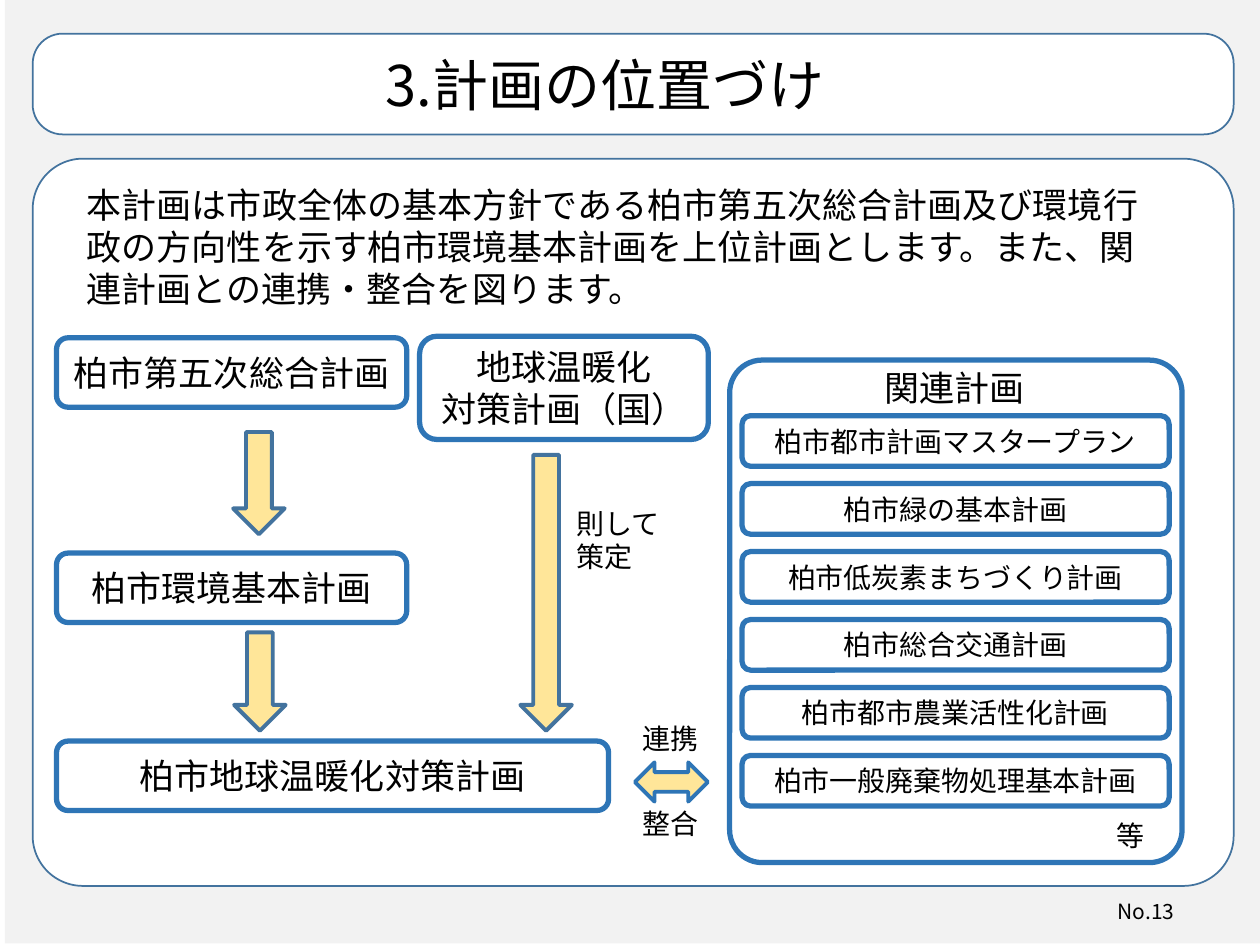
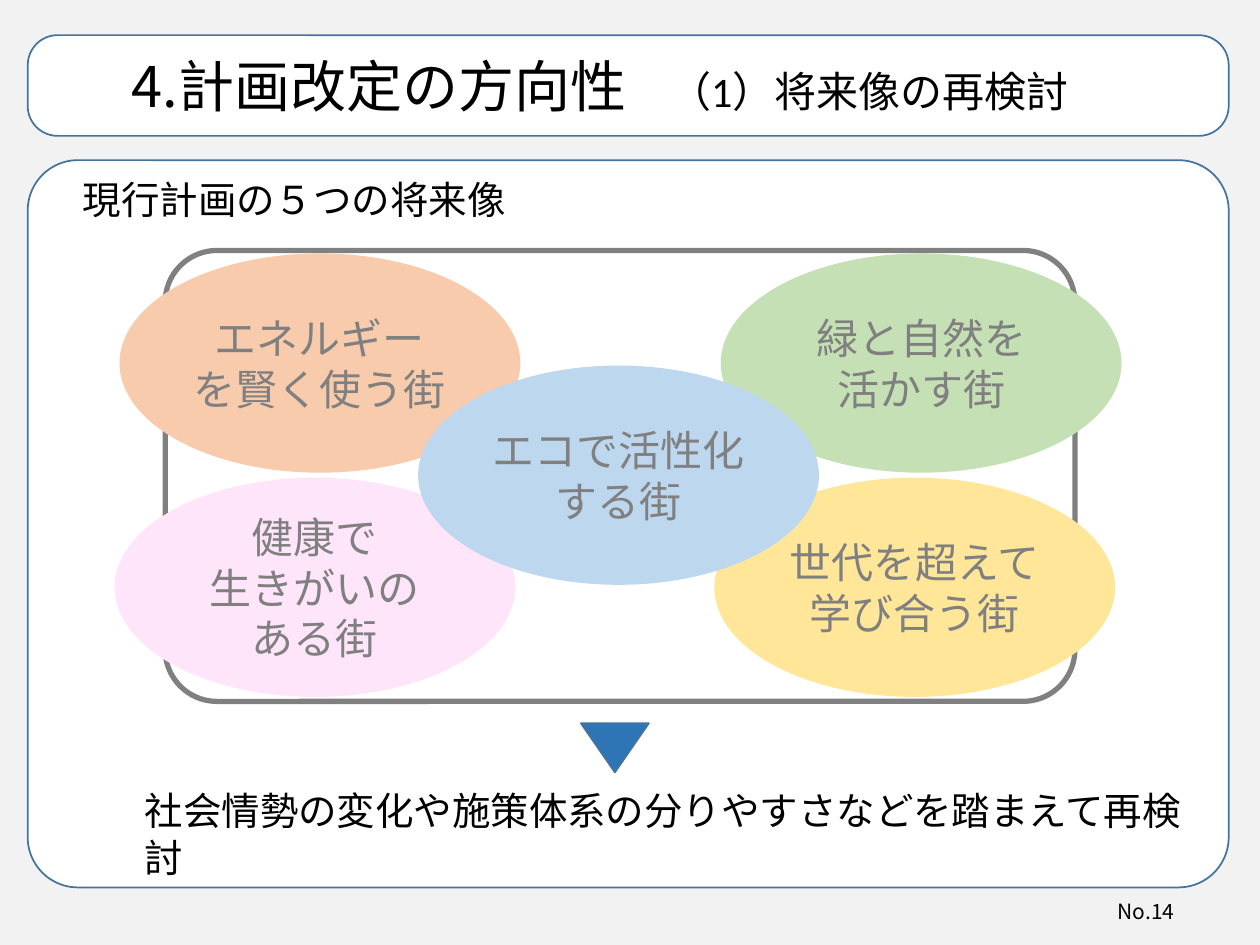
"""Build two slides on the position and the revision of a city climate plan."""
from dataclasses import dataclass
from typing import Optional

import lxml.etree
import pptx
import pptx.dml.color
import pptx.enum.shapes
import pptx.enum.text
import pptx.oxml.ns
import pptx.util

Cm = pptx.util.Cm
SHAPE = pptx.enum.shapes.MSO_SHAPE
ALIGN = pptx.enum.text.PP_ALIGN
ANCHOR = pptx.enum.text.MSO_ANCHOR

FONT = "Noto Sans CJK JP"
BLACK, WHITE, GREY = "000000", "FFFFFF", "808080"
BACKDROP, OUTLINE, BLUE, YELLOW = "F2F2F2", "43739E", "2E75B6", "FFE699"


@dataclass(frozen=True)
class Run:
    """A piece of text in one size and font."""
    text: str
    size: float
    font: str = FONT
    color: str = BLACK


@dataclass(frozen=True)
class Block:
    """A preset shape with its place, colours and centred paragraphs."""
    kind: SHAPE
    x: float
    y: float
    w: float
    h: float
    fill: Optional[str] = WHITE
    line: Optional[str] = None
    weight: float = 1
    adj: Optional[float] = None
    paras: tuple[tuple[Run, ...], ...] = ()
    rotation: float = 0


@dataclass(frozen=True)
class Label:
    """A left-aligned text box."""
    text: str
    x: float
    y: float
    w: float
    h: float
    size: float


def rgb(value: str) -> pptx.dml.color.RGBColor:
    """Turn a hex string into a colour."""
    return pptx.dml.color.RGBColor.from_string(value)


def lines(text: str, size: float, color: str = BLACK) -> tuple[tuple[Run, ...], ...]:
    """Split text at line ends into paragraphs of one run."""
    return tuple((Run(part, size, color=color),) for part in text.split("\n"))


def add_run(p, run: Run) -> None:
    """Append a run to a paragraph."""
    r = p.add_run()
    r.text = run.text
    r.font.size = pptx.util.Pt(run.size)
    r.font.color.rgb = rgb(run.color)
    r.font.name = run.font
    east_asian = lxml.etree.SubElement(r.font._element, pptx.oxml.ns.qn("a:ea"))
    east_asian.set("typeface", FONT)


def draw_block(s, block: Block) -> None:
    """Draw a preset shape and its text."""
    sp = s.shapes.add_shape(block.kind, Cm(block.x), Cm(block.y), Cm(block.w), Cm(block.h))
    sp.shadow.inherit = False
    sp.rotation = block.rotation
    if block.adj is not None:
        sp.adjustments[0] = block.adj
    if block.fill:
        sp.fill.solid()
        sp.fill.fore_color.rgb = rgb(block.fill)
    else:
        sp.fill.background()
    if block.line:
        sp.line.color.rgb = rgb(block.line)
        sp.line.width = pptx.util.Pt(block.weight)
    else:
        sp.line.fill.background()
    tf = sp.text_frame
    tf.vertical_anchor = ANCHOR.MIDDLE
    for i, runs in enumerate(block.paras):
        p = tf.add_paragraph() if i else tf.paragraphs[0]
        p.alignment = ALIGN.CENTER
        for run in runs:
            add_run(p, run)


def draw_label(s, label: Label):
    """Draw a wrapping text box and return it."""
    sp = s.shapes.add_textbox(Cm(label.x), Cm(label.y), Cm(label.w), Cm(label.h))
    sp.text_frame.word_wrap = True
    add_run(sp.text_frame.paragraphs[0], Run(label.text, label.size))
    return sp


def draw_page_number(s, number: int) -> None:
    """Write the page number at the lower right."""
    tf = draw_label(s, Label(f"No.{number}", 15.32, 18.11, 8.61, 0.56, 12)).text_frame
    tf.vertical_anchor = ANCHOR.MIDDLE
    p = tf.paragraphs[0]
    p.alignment = ALIGN.RIGHT
    p.line_spacing = 0.9
    p.space_before = pptx.util.Pt(10)


def add_page(prs, number: int, title: tuple[Run, ...], dx: float = 0, dy: float = 0):
    """Add a slide with backdrop, panel, title band and page number."""
    s = prs.slides.add_slide(prs.slide_layouts[6])
    x = 0.56 + dx
    draw_block(s, Block(SHAPE.RECTANGLE, dx, dy, 25.4, 19.05, BACKDROP))
    draw_block(s, Block(SHAPE.ROUNDED_RECTANGLE, x, 3.23 + dy, 24.21, 14.66,
                        line=OUTLINE, adj=0.069))
    draw_block(s, Block(SHAPE.ROUNDED_RECTANGLE, x, 0.71 + dy, 24.21, 2.03,
                        line=OUTLINE, adj=0.297, paras=(title,)))
    draw_page_number(s, number)
    return s


def plan_box(text: str, x: float, y: float, w: float, h: float, size: float = 20) -> Block:
    """Describe a blue-edged box that names a plan."""
    return Block(SHAPE.ROUNDED_RECTANGLE, x, y, w, h, line=BLUE, weight=3,
                 paras=lines(text, size))


def build_position(prs) -> None:
    """Build the slide on how the plan relates to other plans."""
    s = add_page(prs, 13, (Run("3.計画の位置づけ\u3000".replace("\u3000", "　"), 32),), 0.1, -0.03)
    plans = (
        plan_box("柏市第五次総合計画", 1.14, 6.81, 7.06, 1.4),
        plan_box("柏市環境基本計画", 1.14, 11.15, 7.06, 1.4),
        plan_box("柏市地球温暖化対策計画", 1.14, 14.94, 11.13, 1.4),
        plan_box("地球温暖化\n対策計画（国）", 8.46, 6.78, 5.82, 2.08),
    )
    arrows = tuple(
        Block(SHAPE.DOWN_ARROW, x, y, 1.04, h, YELLOW, OUTLINE, 2.25)
        for x, y, h in ((4.7, 8.71, 2.06), (4.72, 12.75, 1.98), (10.49, 9.17, 5.56))
    )
    exchange = Block(SHAPE.LEFT_RIGHT_ARROW, 12.8, 15.37, 1.47, 0.79, YELLOW, BLUE, 2.25)
    related_frame = Block(SHAPE.ROUNDED_RECTANGLE, 14.71, 7.26, 9.12, 10.13,
                          line=BLUE, weight=3, adj=0.072)
    related_names = ("柏市都市計画マスタープラン", "柏市緑の基本計画", "柏市低炭素まちづくり計画",
                     "柏市総合交通計画", "柏市都市農業活性化計画", "柏市一般廃棄物処理基本計画")
    related = tuple(plan_box(name, 14.96, 8.38 + 1.37 * i, 8.61, 1.02, 16)
                    for i, name in enumerate(related_names))
    for block in (*plans, *arrows, exchange, related_frame, *related):
        draw_block(s, block)
    for label in (
        Label("本計画は市政全体の基本方針である柏市第五次総合計画及び環境行政の方向性を示す"
              "柏市環境基本計画を上位計画とします。また、関連計画との連携・整合を図ります。",
              1.5, 3.58, 22.05, 2.82, 20),
        Label("関連計画", 17.58, 7.26, 4.39, 1.12, 20),
        Label("則して策定", 11.38, 10.08, 2.31, 1.63, 16),
        Label("連携", 12.7, 14.43, 1.78, 0.94, 16),
        Label("整合", 12.7, 16.13, 1.78, 0.94, 16),
        Label("等", 22.25, 16.38, 1.78, 0.94, 16),
    ):
        draw_label(s, label)


def build_direction(prs) -> None:
    """Build the slide on the five visions under review."""
    s = add_page(prs, 14, (Run("4.計画改定の方向性", 32), Run("　", 24),
                           Run("（1）将来像の再検討", 24, "Calibri"), Run("　", 32)))
    draw_block(s, Block(SHAPE.ROUNDED_RECTANGLE, 3.33, 5.05, 18.34, 9.09, None, GREY, 3, 0.115))
    for text, x, y, fill in (
        ("エネルギー\nを賢く使う街", 2.41, 5.11, "F8CBAD"),
        ("緑と自然を\n活かす街", 14.53, 5.11, "C5E0B4"),
        ("健康で\n生きがいの\nある街", 2.31, 9.63, "FFE5FA"),
        ("世代を超えて学び合う街", 14.4, 9.63, YELLOW),
        ("エコで活性化\nする街", 8.43, 7.37, "BDD7EE"),
    ):
        draw_block(s, Block(SHAPE.OVAL, x, y, 8.08, 4.42, fill, paras=lines(text, 24, GREY)))
    draw_block(s, Block(SHAPE.ISOSCELES_TRIANGLE, 11.71, 14.58, 1.37, 0.99, BLUE, OUTLINE,
                        rotation=180))
    draw_label(s, Label("現行計画の５つの将来像", 1.42, 3.43, 21.97, 1.19, 22))
    draw_label(s, Label("社会情勢の変化や施策体系の分りやすさなどを踏まえて再検討",
                        2.67, 15.75, 22.05, 1.19, 22))


def main() -> None:
    """Build and save the presentation."""
    prs = pptx.Presentation()
    prs.slide_width, prs.slide_height = Cm(25.4), Cm(19.05)
    build_position(prs)
    build_direction(prs)
    prs.save("out.pptx")


if __name__ == "__main__":
    main()
